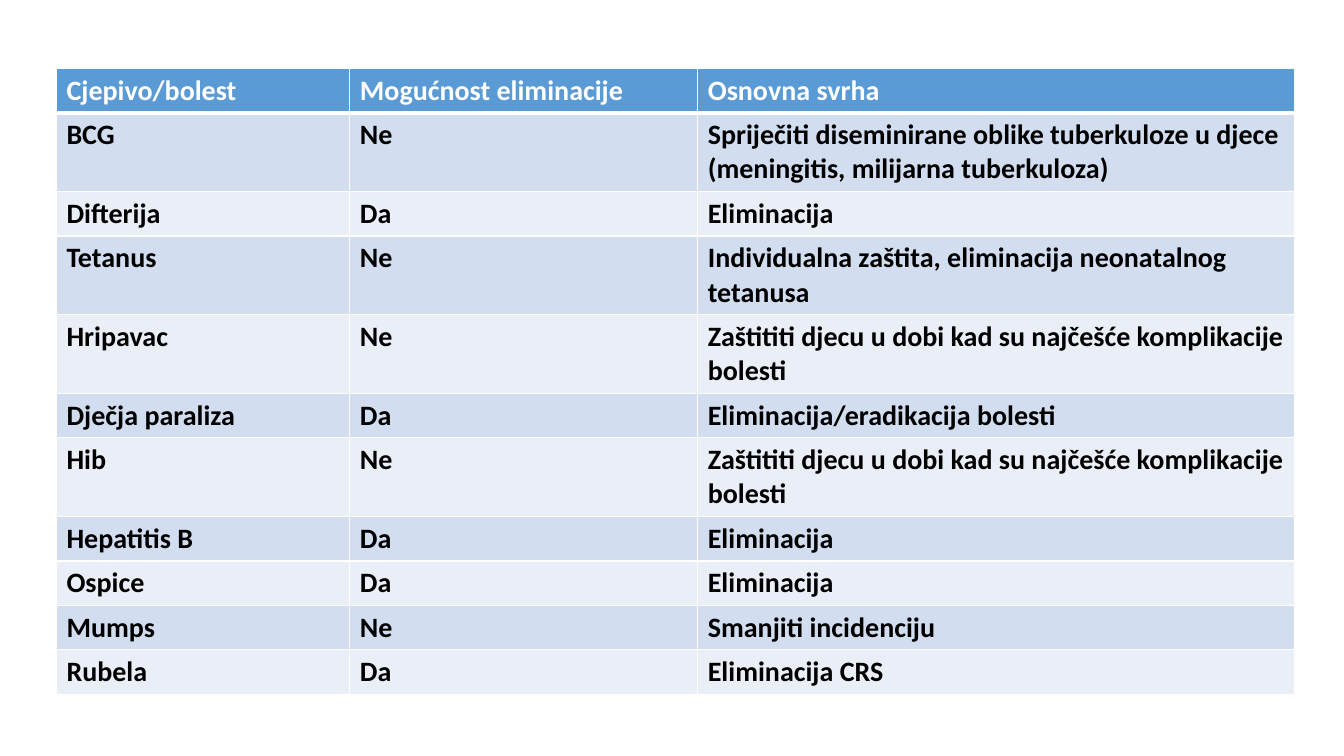
from lxml.etree import SubElement
from pptx import Presentation
from pptx.dml.color import RGBColor
from pptx.oxml.ns import qn
from pptx.util import Inches, Pt

SLIDE_W, SLIDE_H = 13.33, 7.5
COLUMN_SHARES = (0.237, 0.281, 0.482)
LINE_H, PADDING_H = 0.34, 0.1
HEADER_FILL, BAND_FILLS = "5B9BD5", ("D2DEEF", "EAEFF7")
WHITE, BLACK = "FFFFFF", "000000"

CHILD_PROTECTION = "Zaštititi djecu u dobi kad su najčešće komplikacije bolesti"
VACCINES = [
    ("Cjepivo/bolest", "Mogućnost eliminacije", "Osnovna svrha", 1),
    ("BCG", "Ne", "Spriječiti diseminirane oblike tuberkuloze u djece "
                  "(meningitis, milijarna tuberkuloza)", 2),
    ("Difterija", "Da", "Eliminacija", 1),
    ("Tetanus", "Ne", "Individualna zaštita, eliminacija neonatalnog tetanusa", 2),
    ("Hripavac", "Ne", CHILD_PROTECTION, 2),
    ("Dječja paraliza", "Da", "Eliminacija/eradikacija bolesti", 1),
    ("Hib", "Ne", CHILD_PROTECTION, 2),
    ("Hepatitis B", "Da", "Eliminacija", 1),
    ("Ospice", "Da", "Eliminacija", 1),
    ("Mumps", "Ne", "Smanjiti incidenciju", 1),
    ("Rubela", "Da", "Eliminacija CRS", 1),
]


def color(hex_code):
    return RGBColor.from_string(hex_code)


def add_borders(cell, widths):
    properties = cell._tc.get_or_add_tcPr()
    for side, width in widths.items():
        border = SubElement(properties, qn(f"a:ln{side}"), w=str(Pt(width)))
        paint = SubElement(border, qn("a:solidFill"))
        SubElement(paint, qn("a:srgbClr"), val=WHITE)


def fill_cell(cell, words, row):
    add_borders(cell, {"L": 1, "R": 1, "T": 3 if row == 1 else 1,
                       "B": 3 if row == 0 else 1})
    cell.fill.solid()
    cell.fill.fore_color.rgb = color(BAND_FILLS[(row - 1) % 2] if row else HEADER_FILL)
    run = cell.text_frame.paragraphs[0].add_run()
    run.text = words
    run.font.name = "Calibri"
    run.font.size = Pt(20)
    run.font.bold = True
    run.font.color.rgb = color(BLACK if row else WHITE)


def add_vaccine_table(slide, left, top, width):
    heights = [PADDING_H + LINE_H * lines for *_, lines in VACCINES]
    table = slide.shapes.add_table(
        len(VACCINES), len(COLUMN_SHARES),
        Inches(left), Inches(top), Inches(width), Inches(sum(heights))).table
    for column, share in zip(table.columns, COLUMN_SHARES):
        column.width = Inches(width * share)
    for row, (*entries, _) in enumerate(VACCINES):
        table.rows[row].height = Inches(heights[row])
        for column, words in enumerate(entries):
            fill_cell(table.cell(row, column), words, row)


def main():
    deck = Presentation()
    deck.slide_width, deck.slide_height = Inches(SLIDE_W), Inches(SLIDE_H)
    slide = deck.slides.add_slide(deck.slide_layouts[6])
    add_vaccine_table(slide, 0.56, 0.68, 12.28)
    deck.save("out.pptx")


if __name__ == "__main__":
    main()
